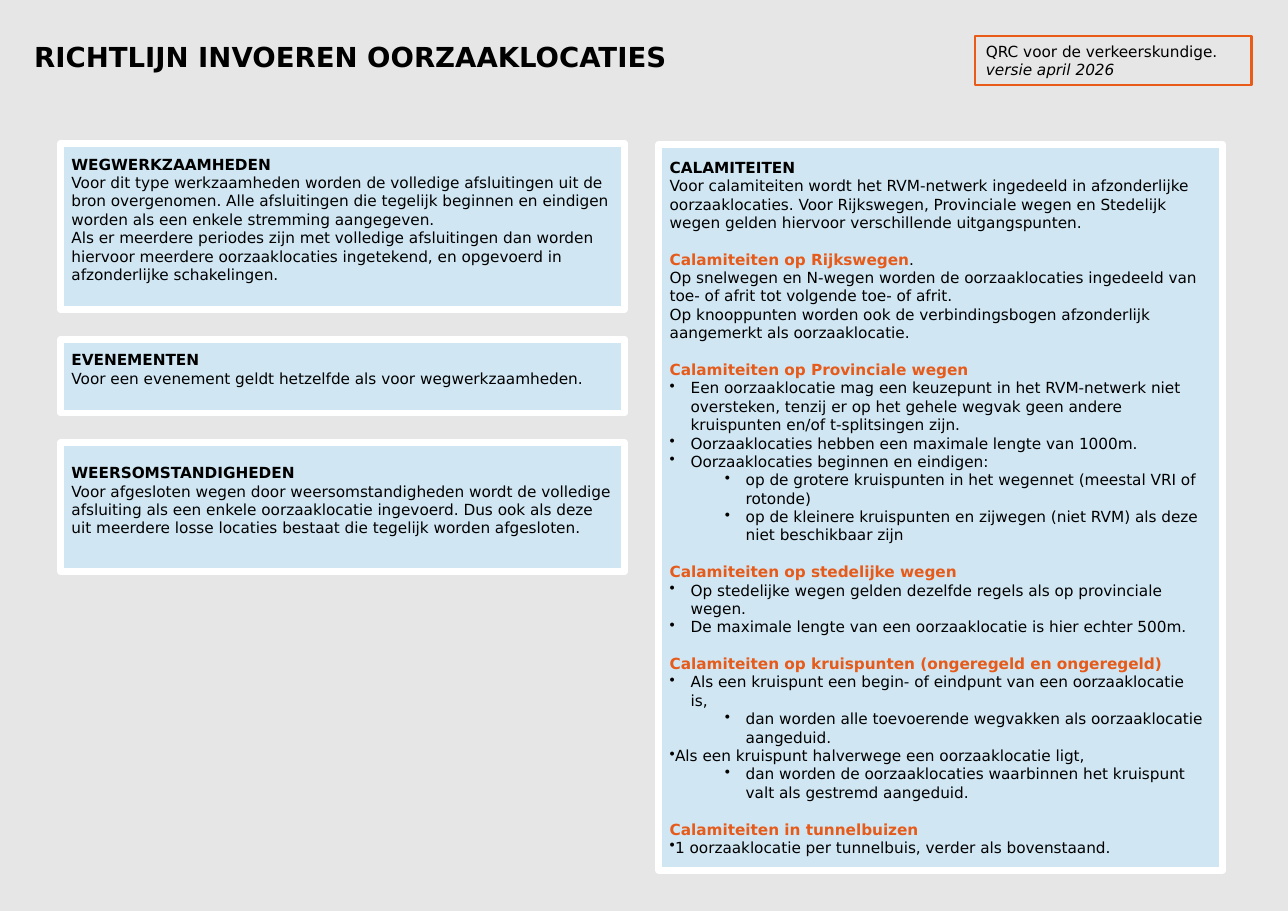
"""Build the quick reference card for entering cause locations."""
from dataclasses import dataclass

from lxml import etree
from pptx import Presentation
from pptx import util as u
from pptx.dml.color import RGBColor
from pptx.enum import shapes, text
from pptx.oxml.ns import qn

PX = 9144


@dataclass(frozen=True)
class Theme:
    """Hold the colours, font and type sizes of the card."""
    font: str = "DejaVu Sans"
    ink: str = "000000"
    accent: str = "E65A1A"
    frame: str = "E95B19"
    panel: str = "D0E7F3"
    border: str = "FFFFFF"
    page: str = "E7E6E6"
    title: int = 18
    body: int = 10
    gap: int = 12


THEME = Theme()
INDENTS = {"bullet": (19, -19, 0), "sub": (69, -19, 1), "flush": (0, -19, 0)}

ROADWORKS = [
    ("head", "WEGWERKZAAMHEDEN"),
    ("body", "Voor dit type werkzaamheden worden de volledige afsluitingen uit de bron overgenomen. "
             "Alle afsluitingen die tegelijk beginnen en eindigen worden als een enkele stremming aangegeven."),
    ("body", "Als er meerdere periodes zijn met volledige afsluitingen dan worden hiervoor meerdere "
             "oorzaaklocaties ingetekend, en opgevoerd in afzonderlijke schakelingen."),
]
EVENTS = [
    ("head", "EVENEMENTEN"),
    ("body", "Voor een evenement geldt hetzelfde als voor wegwerkzaamheden."),
]
WEATHER = [
    ("head", "WEERSOMSTANDIGHEDEN"),
    ("body", "Voor afgesloten wegen door weersomstandigheden wordt de volledige afsluiting als een enkele "
             "oorzaaklocatie ingevoerd. Dus ook als deze uit meerdere losse locaties bestaat die tegelijk "
             "worden afgesloten."),
]
CALAMITIES = [
    ("head", "CALAMITEITEN"),
    ("body", "Voor calamiteiten wordt het RVM-netwerk ingedeeld in afzonderlijke oorzaaklocaties. Voor "
             "Rijkswegen, Provinciale wegen en Stedelijk wegen gelden hiervoor verschillende uitgangspunten."),
    ("topic", "Calamiteiten op Rijkswegen", "."),
    ("body", "Op snelwegen en N-wegen worden de oorzaaklocaties ingedeeld van toe- of afrit tot volgende "
             "toe- of afrit."),
    ("body", "Op knooppunten worden ook de verbindingsbogen afzonderlijk aangemerkt als oorzaaklocatie."),
    ("topic", "Calamiteiten op Provinciale wegen"),
    ("bullet", "Een oorzaaklocatie mag een keuzepunt in het RVM-netwerk niet oversteken, tenzij er op het "
               "gehele wegvak geen andere kruispunten en/of t-splitsingen zijn."),
    ("bullet", "Oorzaaklocaties hebben een maximale lengte van 1000m."),
    ("bullet", "Oorzaaklocaties beginnen en eindigen:"),
    ("sub", "op de grotere kruispunten in het wegennet (meestal VRI of rotonde)"),
    ("sub", "op de kleinere kruispunten en zijwegen (niet RVM) als deze niet beschikbaar zijn"),
    ("topic", "Calamiteiten op stedelijke wegen"),
    ("bullet", "Op stedelijke wegen gelden dezelfde regels als op provinciale wegen."),
    ("bullet", "De maximale lengte van een oorzaaklocatie is hier echter 500m."),
    ("topic", "Calamiteiten op kruispunten (ongeregeld en ongeregeld)"),
    ("bullet", "Als een kruispunt een begin- of eindpunt van een oorzaaklocatie\nis,"),
    ("sub", "dan worden alle toevoerende wegvakken als oorzaaklocatie aangeduid."),
    ("flush", "Als een kruispunt halverwege een oorzaaklocatie ligt,"),
    ("sub", "dan worden de oorzaaklocaties waarbinnen het kruispunt valt als gestremd aangeduid."),
    ("topic", "Calamiteiten in tunnelbuizen"),
    ("flush", "1 oorzaaklocatie per tunnelbuis, verder als bovenstaand."),
]


def px(*lengths):
    """Turn pixel lengths into EMU."""
    return [u.Emu(length * PX) for length in lengths]


def rgb(colour):
    """Return a theme colour as an RGB value."""
    return RGBColor.from_string(colour)


def add_run(paragraph, words, size=THEME.body, colour=THEME.ink, bold=False, italic=False):
    """Add one formatted run."""
    run = paragraph.add_run()
    run.text = words
    font = run.font
    font.name, font.size, font.bold, font.italic = THEME.font, u.Pt(size), bold, italic
    font.color.rgb = rgb(colour)


def add_bullet(paragraph, kind):
    """Give a paragraph its bullet, indent and level."""
    margin, indent, level = INDENTS[kind]
    paragraph.level = level
    properties = paragraph._p.get_or_add_pPr()
    properties.set("marL", str(margin * PX))
    properties.set("indent", str(indent * PX))
    etree.SubElement(properties, qn("a:buChar")).set("char", "•")


def add_frame(slide, box, line, width, fill=None):
    """Add a bordered rectangle and return its text frame."""
    frame = slide.shapes.add_shape(shapes.MSO_SHAPE.RECTANGLE, *px(*box))
    frame.shadow.inherit = False
    frame.line.color.rgb = rgb(line)
    frame.line.width = u.Pt(width)
    if fill:
        frame.fill.solid()
        frame.fill.fore_color.rgb = rgb(fill)
    else:
        frame.fill.background()
    content = frame.text_frame
    content.word_wrap = True
    return content


def next_paragraph(content, index):
    """Return the first paragraph or a new one, aligned left."""
    paragraph = content.add_paragraph() if index else content.paragraphs[0]
    paragraph.alignment = text.PP_ALIGN.LEFT
    return paragraph


def add_title(slide, box, words):
    """Place and format the title."""
    title = slide.shapes.title
    title.left, title.top, title.width, title.height = px(*box)
    content = title.text_frame
    content.auto_size = text.MSO_AUTO_SIZE.NONE
    content.vertical_anchor = text.MSO_ANCHOR.MIDDLE
    add_run(next_paragraph(content, 0), words, THEME.title, bold=True)


def add_version(slide, box, audience, version):
    """Add the framed audience and version note."""
    content = add_frame(slide, box, THEME.frame, 1.5)
    content.vertical_anchor = text.MSO_ANCHOR.TOP
    for index, words in enumerate((audience, version)):
        add_run(next_paragraph(content, index), words, italic=index == 1)


def add_panel(slide, box, entries, bottom_inset):
    """Add a blue panel with its guideline text."""
    content = add_frame(slide, box, THEME.border, 4.5, THEME.panel)
    content.vertical_anchor = text.MSO_ANCHOR.MIDDLE
    content.margin_left, content.margin_top, content.margin_right, content.margin_bottom = px(
        10, 10, 10, bottom_inset)
    for index, (kind, words, *tail) in enumerate(entries):
        paragraph = next_paragraph(content, index)
        if kind == "topic":
            paragraph.space_before = u.Pt(THEME.gap)
        if kind in INDENTS:
            add_bullet(paragraph, kind)
        colour = THEME.accent if kind == "topic" else THEME.ink
        for number, row in enumerate(words.split("\n")):
            if number:
                paragraph.add_line_break()
            add_run(paragraph, row, colour=colour, bold=kind in ("head", "topic"))
        for ending in tail:
            add_run(paragraph, ending)


def main():
    """Build and save the card."""
    deck = Presentation()
    deck.slide_width, deck.slide_height = px(1169, 827)
    slide = deck.slides.add_slide(deck.slide_layouts[5])
    slide.background.fill.solid()
    slide.background.fill.fore_color.rgb = rgb(THEME.page)
    add_title(slide, (21, 31, 814, 40), "RICHTLIJN INVOEREN OORZAAKLOCATIES")
    add_version(slide, (885, 33, 251, 44), "QRC voor de verkeerskundige.", "versie april 2026")
    top, gap = 130, 27
    for height, entries in ((151, ROADWORKS), (67, EVENTS), (117, WEATHER)):
        add_panel(slide, (55, top, 512, height), entries, 23)
        top += height + gap
    add_panel(slide, (598, 131, 512, 659), CALAMITIES, 10)
    deck.save("out.pptx")


if __name__ == "__main__":
    main()
